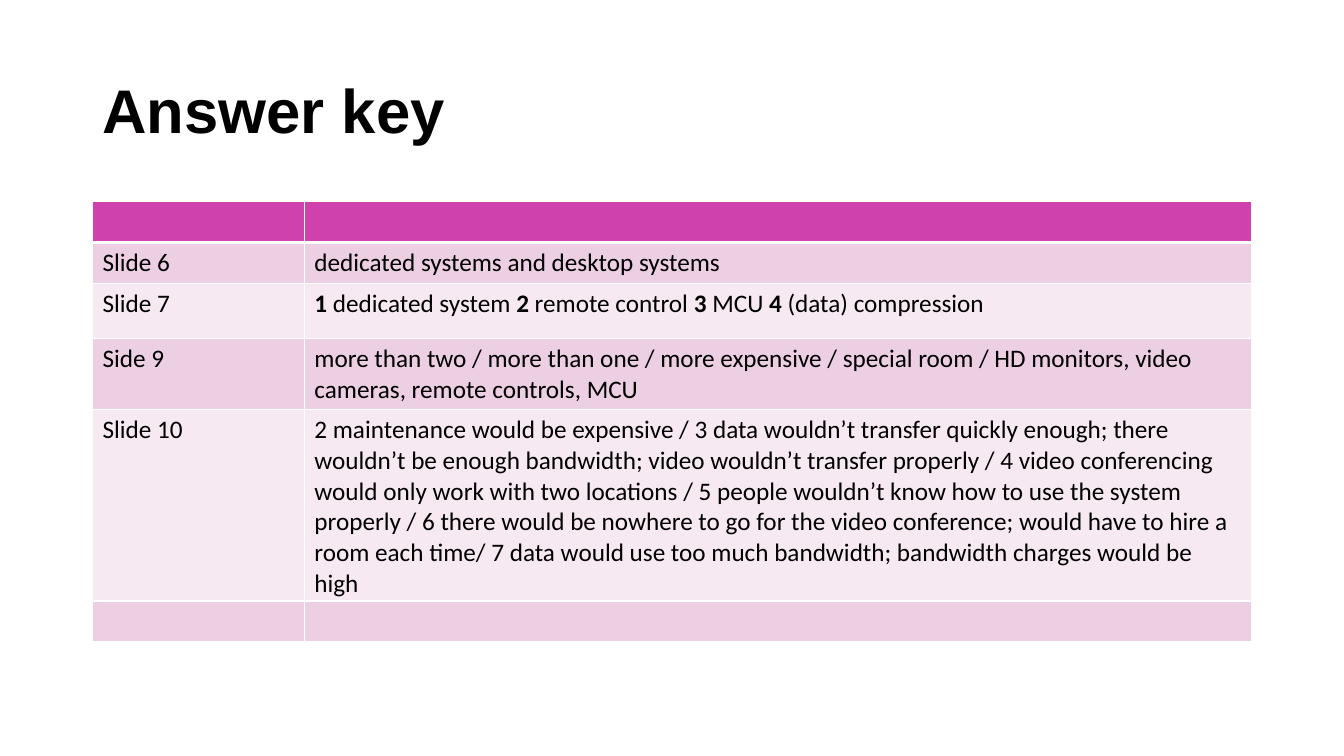
from dataclasses import dataclass
from lxml.etree import SubElement
from pptx import Presentation
from pptx.dml.color import RGBColor
from pptx.enum.text import MSO_ANCHOR
from pptx.oxml.ns import qn
from pptx.slide import Slide
from pptx.table import _Cell
from pptx.text.text import Font
from pptx.util import Cm, Pt


@dataclass(frozen=True)
class Theme:
    ink: str = "000000"
    head: str = "CF41AD"
    bands: tuple[str, str] = ("EDCFE3", "F6E9F1")
    rule: str = "FFFFFF"
    title_font: str = "Arial"
    body_font: str = "Calibri"
    title_size: int = 44
    body_size: int = 18


@dataclass(frozen=True)
class Answer:
    """One table row; every second piece between bars is bold."""
    label: str = ""
    lines: tuple[str, ...] = ()
    height: float = 1.03


THEME = Theme()
LEFT, WIDTH = 2.33, 29.21
COLUMNS = (5.34, 23.87)
ANSWERS = (
    Answer(),
    Answer("Slide 6", ("dedicated systems and desktop systems",)),
    Answer("Slide 7", ("|1 |dedicated system |2 |remote control |3 |MCU "
                       "|4 |(data) compression",), 1.4),
    Answer("Side 9", ("more than two / more than one / more expensive / special room "
                      "/ HD monitors, video cameras, remote controls, MCU",)),
    Answer("Slide 10", (
        "2 maintenance would be expensive / 3 data wouldn’t transfer quickly enough; there",
        "wouldn’t be enough bandwidth; video wouldn’t transfer properly / 4 video "
        "conferencing would only work with two locations / 5 people wouldn’t know how "
        "to use the system properly / 6 there would be nowhere to go for the video "
        "conference; would have to hire a room each time/ 7 data would use too much "
        "bandwidth; bandwidth charges would be high")),
    Answer(),
)


def style(font: Font, name: str, size: int, bold: bool) -> None:
    font.name, font.size, font.bold = name, Pt(size), bold
    font.color.rgb = RGBColor.from_string(THEME.ink)


def add_title(slide: Slide, text: str) -> None:
    box = slide.shapes.add_textbox(Cm(LEFT), Cm(1.01), Cm(WIDTH), Cm(3.68))
    frame = box.text_frame
    frame.word_wrap = True
    frame.vertical_anchor = MSO_ANCHOR.MIDDLE
    frame.text = text
    line = frame.paragraphs[0]
    line.line_spacing = 0.9
    style(line.runs[0].font, THEME.title_font, THEME.title_size, True)


def add_rules(cell: _Cell, top: float, bottom: float) -> None:
    props = cell._tc.get_or_add_tcPr()
    for side, width in (("L", 1), ("R", 1), ("T", top), ("B", bottom)):
        rule = SubElement(props, qn(f"a:ln{side}"), w=str(Pt(width)))
        fill = SubElement(rule, qn("a:solidFill"))
        SubElement(fill, qn("a:srgbClr"), val=THEME.rule)


def fill_cell(cell: _Cell, lines: tuple[str, ...], row: int) -> None:
    # Borders come before the fill in the cell properties
    add_rules(cell, 3 if row == 1 else 1, 3 if row == 0 else 1)
    cell.fill.solid()
    shade = THEME.bands[(row - 1) % 2] if row else THEME.head
    cell.fill.fore_color.rgb = RGBColor.from_string(shade)
    frame = cell.text_frame
    for index, line in enumerate(lines):
        para = frame.add_paragraph() if index else frame.paragraphs[0]
        for part, text in enumerate(line.split("|")):
            if text:
                run = para.add_run()
                run.text = text
                style(run.font, THEME.body_font, THEME.body_size, part % 2 == 1)


def add_answers(slide: Slide) -> None:
    total = sum(answer.height for answer in ANSWERS)
    table = slide.shapes.add_table(len(ANSWERS), len(COLUMNS), Cm(LEFT), Cm(5.08),
                                   Cm(WIDTH), Cm(total)).table
    for column, width in zip(table.columns, COLUMNS):
        column.width = Cm(width)
    for row, answer in enumerate(ANSWERS):
        table.rows[row].height = Cm(answer.height)
        fill_cell(table.cell(row, 0), (answer.label,), row)
        fill_cell(table.cell(row, 1), answer.lines, row)


def main() -> None:
    deck = Presentation()
    deck.slide_width, deck.slide_height = Cm(33.87), Cm(19.05)
    slide = deck.slides.add_slide(deck.slide_layouts[6])
    # Heading
    add_title(slide, "Answer key")
    # Answers by slide
    add_answers(slide)
    deck.save("out.pptx")


if __name__ == "__main__":
    main()
